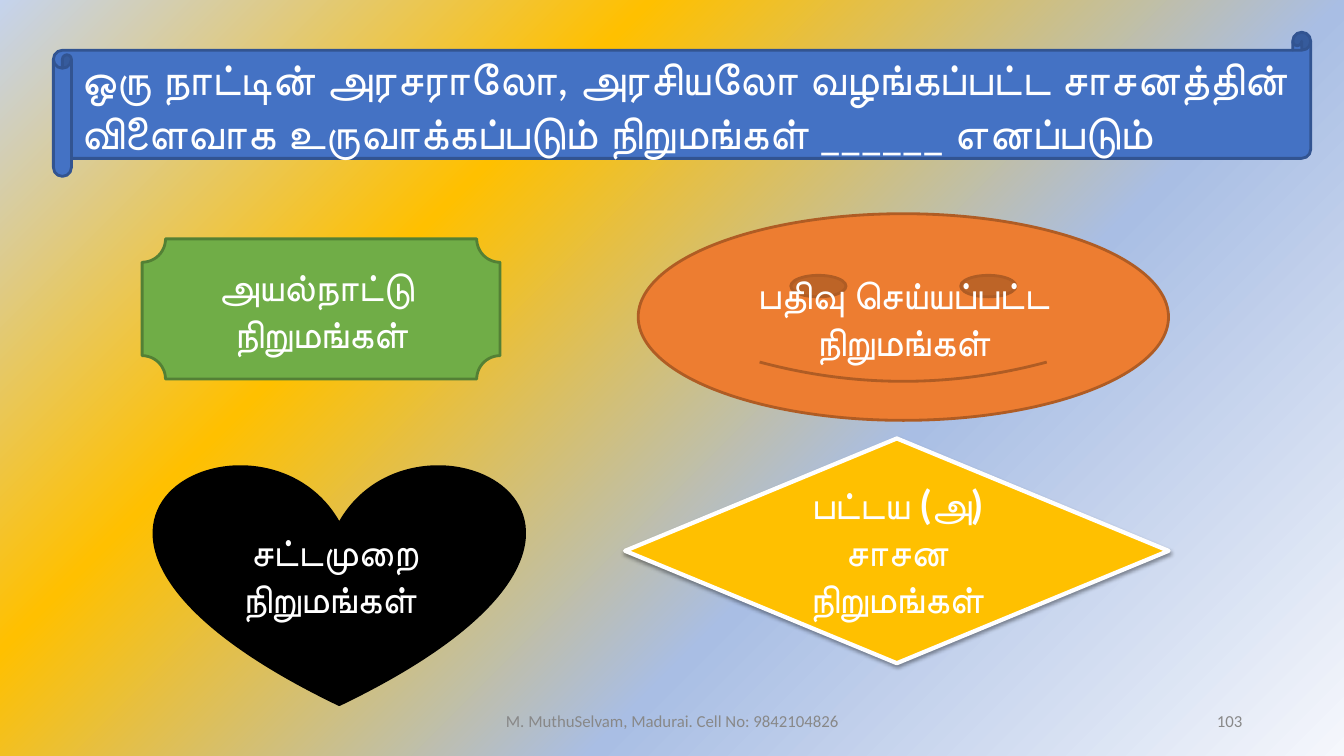
"""Builds a Tamil quiz slide about kinds of companies with four answer shapes."""
from pptx import Presentation
from pptx.dml.color import RGBColor
from pptx.enum.shapes import MSO_SHAPE
from pptx.enum.text import MSO_ANCHOR, PP_ALIGN
from pptx.oxml import parse_xml
from pptx.oxml.ns import nsdecls, qn
from pptx.util import Inches, Pt

COLORS = {
    "white": "FFFFFF", "black": "000000", "grey": "888888",
    "blue": "4472C4", "dark blue": "325491",
    "green": "70AD47", "dark green": "538035",
    "orange": "ED7D31", "dark orange": "AF5C24", "gold": "FFC000",
    "mist": "F5F7FC", "sky": "A9BEE4", "pale blue": "C5D3ED",
}
BACKDROP = [(0, "mist"), (36, "sky"), (69, "gold"), (100, "pale blue")]
QUESTION = ["ஒரு நாட்டின் அரசராலோ, அரசியலோ வழங்கப்பட்ட சாசனத்தின் "
            "விளைவாக உருவாக்கப்படும் நிறுமங்கள் ______ எனப்படும் "]
QUESTION_BOX = (0.53, 0.32, 12.47, 1.43)
ANSWERS = [
    (MSO_SHAPE.PLAQUE, (1.41, 2.37, 3.55, 1.39), "green", "dark green", 2, False,
     ["அயல்நாட்டு ", "நிறுமங்கள்"]),
    (MSO_SHAPE.SMILEY_FACE, (6.33, 2.12, 5.26, 2.05), "orange", "dark orange", 2, False,
     ["பதிவு செய்யப்பட்ட", " நிறுமங்கள் "]),
    (MSO_SHAPE.HEART, (1.54, 4.6, 3.65, 2.39), "black", "black", 2, False,
     ["சட்டமுறை ", "நிறுமங்கள்  "]),
    (MSO_SHAPE.DIAMOND, (6.2, 4.35, 5.39, 2.23), "gold", "white", 3, True,
     ["பட்டய (அ) சாசன நிறுமங்கள்"]),
]
FOOTERS = [
    ((4.42, 6.95, 4.5, 0.4), PP_ALIGN.CENTER, "M. MuthuSelvam, Madurai. Cell No: 9842104826"),
    ((9.42, 6.95, 3, 0.4), PP_ALIGN.RIGHT, "103"),
]


def color(name):
    return RGBColor.from_string(COLORS[name])


def paint_backdrop(slide):
    slide.background.fill.solid()
    properties = slide.element.find(".//" + qn("p:bgPr"))
    stops = "".join(
        f'<a:gs pos="{percent * 1000}"><a:srgbClr val="{COLORS[name]}"/></a:gs>'
        for percent, name in BACKDROP)
    gradient = parse_xml(
        f'<a:gradFill {nsdecls("a")} rotWithShape="1"><a:gsLst>{stops}</a:gsLst>'
        '<a:path path="circle"><a:fillToRect l="100000" t="100000"/></a:path></a:gradFill>')
    properties.replace(properties.find(qn("a:solidFill")), gradient)


def write(holder, lines, size, font, ink, align, bold=False):
    frame = holder.text_frame
    frame.word_wrap = True
    frame.vertical_anchor = MSO_ANCHOR.MIDDLE
    frame.text = "\n".join(lines)
    for paragraph in frame.paragraphs:
        paragraph.alignment = align
        paragraph.font.size = Pt(size)
        paragraph.font.name = font
        paragraph.font.bold = bold
        paragraph.font.color.rgb = color(ink)


def add_panel(slide, preset, box, fill, edge, width):
    panel = slide.shapes.add_shape(preset, *map(Inches, box))
    panel.shadow.inherit = False
    panel.fill.solid()
    panel.fill.fore_color.rgb = color(fill)
    panel.line.color.rgb = color(edge)
    panel.line.width = Pt(width)
    return panel


def raise_panel(panel):
    panel.element.spPr.find(qn("a:effectLst")).append(parse_xml(
        f'<a:outerShdw {nsdecls("a")} blurRad="{Pt(3.1)}" dist="{Pt(1.6)}" dir="5400000" '
        f'rotWithShape="0"><a:srgbClr val="{COLORS["black"]}"><a:alpha val="38000"/>'
        '</a:srgbClr></a:outerShdw>'))


def main():
    deck = Presentation()
    deck.slide_width, deck.slide_height = Inches(13.33), Inches(7.5)
    slide = deck.slides.add_slide(deck.slide_layouts[6])
    paint_backdrop(slide)

    banner = add_panel(slide, MSO_SHAPE.HORIZONTAL_SCROLL, QUESTION_BOX, "blue", "dark blue", 2)
    write(banner, QUESTION, 32, "Lato", "white", PP_ALIGN.LEFT)

    for preset, box, fill, edge, width, raised, lines in ANSWERS:
        answer = add_panel(slide, preset, box, fill, edge, width)
        write(answer, lines, 28, "Lato", "white", PP_ALIGN.CENTER, bold=raised)
        if raised:
            raise_panel(answer)

    for box, align, words in FOOTERS:
        footer = slide.shapes.add_textbox(*map(Inches, box))
        write(footer, [words], 12, "Calibri", "grey", align)

    deck.save("out.pptx")


if __name__ == "__main__":
    main()
